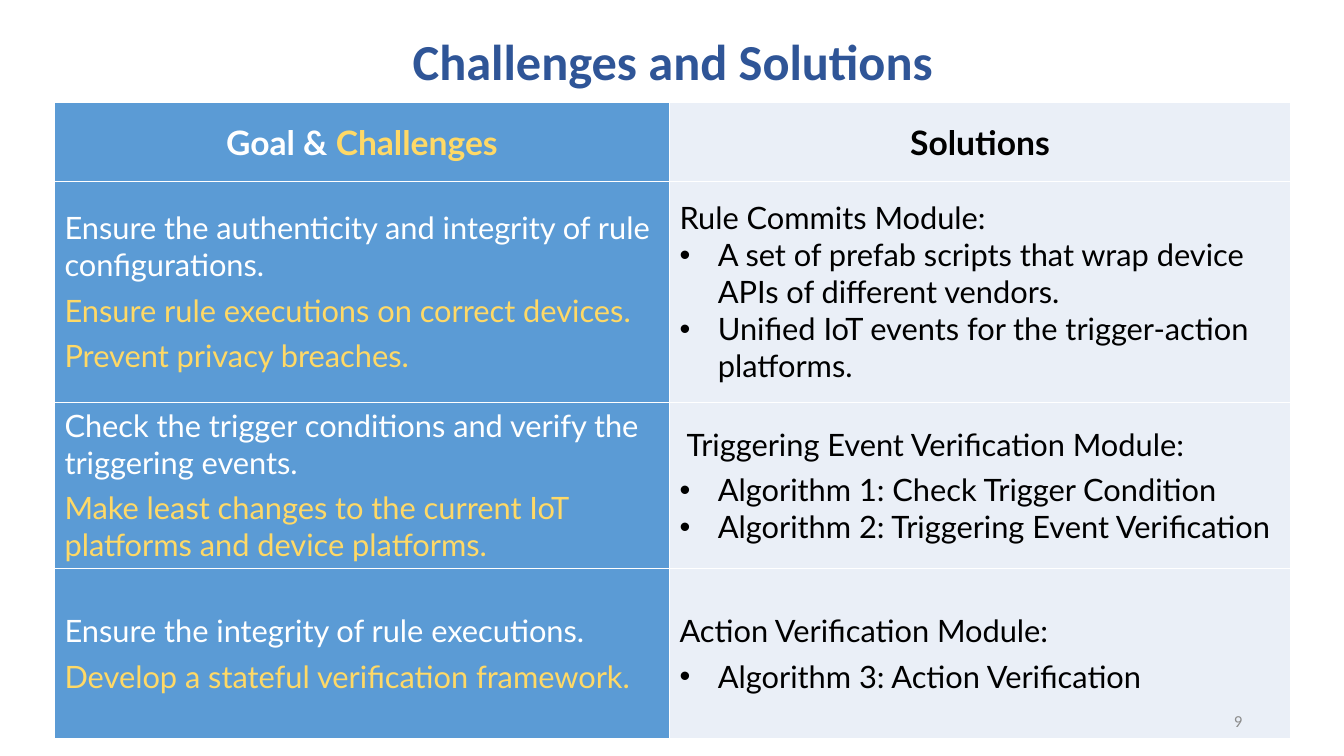
from typing import NamedTuple

from lxml import etree
from pptx import Presentation, util as u
from pptx.dml.color import RGBColor
from pptx.enum import text
from pptx.oxml import ns

WHITE, BLACK, YELLOW = "FFFFFF", "000000", "FFD966"
BLUE, PALE = "5B9BD5", "EAEFF7"
TITLE_BLUE, GREY = "2F5597", "8C8C8C"
CENTER, RIGHT = text.PP_ALIGN.CENTER, text.PP_ALIGN.RIGHT
MIDDLE = text.MSO_ANCHOR.MIDDLE


class Run(NamedTuple):
    text: str
    color: str


class Para(NamedTuple):
    runs: list[Run]
    before: int = 0
    bullet: bool = False


class Row(NamedTuple):
    height: float
    left: list[Para]
    right: list[Para]


def goal(words: str) -> Para:
    return Para([Run(words, WHITE)], 6)


def challenge(words: str) -> Para:
    return Para([Run(words, YELLOW)], 6)


def module(words: str) -> Para:
    return Para([Run(words, BLACK)])


def point(words: str, before: int = 0) -> Para:
    return Para([Run(words, BLACK)], before, True)


COLUMNS = [6.1, 6.16]
ROWS = [
    Row(0.78,
        [Para([Run("Goal & ", WHITE), Run("Challenges", YELLOW)])],
        [module("Solutions")]),
    Row(2.19,
        [goal("Ensure the authenticity and integrity of rule configurations."),
         challenge("Ensure rule executions on correct devices."),
         challenge("Prevent privacy breaches.")],
        [module("Rule Commits Module:"),
         point("A set of prefab scripts that wrap device APIs of different vendors."),
         point("Unified IoT events for the trigger-action platforms.")]),
    Row(1.62,
        [goal("Check the trigger conditions and verify the triggering events."),
         challenge("Make least changes to the current IoT platforms and device platforms.")],
        [module(" Triggering Event Verification Module:"),
         point("Algorithm 1: Check Trigger Condition", 6),
         point("Algorithm 2: Triggering Event Verification")]),
    Row(1.69,
        [goal("Ensure the integrity of rule executions."),
         challenge("Develop a stateful verification framework.")],
        [module("Action Verification Module:"),
         point("Algorithm 3: Action Verification", 6)]),
]


def rgb(color: str) -> RGBColor:
    return RGBColor.from_string(color)


def style(r, font: str, size: int, color: str, bold: bool = False) -> None:
    r.font.name = font
    r.font.size = u.Pt(size)
    r.font.bold = bold
    r.font.color.rgb = rgb(color)


def add_bullet(p) -> None:
    pPr = p._p.get_or_add_pPr()
    indent = u.Inches(0.38)
    pPr.set("marL", str(indent))
    pPr.set("indent", str(-indent))
    etree.SubElement(pPr, ns.qn("a:buFont"), typeface="Arial")
    etree.SubElement(pPr, ns.qn("a:buChar"), char="•")


def add_borders(cell, color: str) -> None:
    tcPr = cell._tc.get_or_add_tcPr()
    for side in ("lnL", "lnR", "lnT", "lnB"):
        ln = etree.SubElement(tcPr, ns.qn(f"a:{side}"), w=str(u.Pt(1)))
        fill = etree.SubElement(ln, ns.qn("a:solidFill"))
        etree.SubElement(fill, ns.qn("a:srgbClr"), val=color)


def fill_cell(cell, paras: list[Para], color: str, header: bool) -> None:
    add_borders(cell, WHITE)
    cell.fill.solid()
    cell.fill.fore_color.rgb = rgb(color)
    cell.vertical_anchor = MIDDLE
    tf = cell.text_frame
    for i, para in enumerate(paras):
        p = tf.add_paragraph() if i else tf.paragraphs[0]
        p.space_before = u.Pt(para.before)
        if header:
            p.alignment = CENTER
        if para.bullet:
            add_bullet(p)
        for run in para.runs:
            r = p.add_run()
            r.text = run.text
            style(r, "Lato", 24 if header else 22, run.color, header)


def add_title(s) -> None:
    sp = s.shapes.title
    sp.left, sp.top = u.Inches(1.86), u.Inches(0.01)
    sp.width, sp.height = u.Inches(9.63), u.Inches(1.06)
    tf = sp.text_frame
    tf.text = "Challenges and Solutions"
    tf.auto_size = text.MSO_AUTO_SIZE.NONE
    tf.vertical_anchor = MIDDLE
    tf.margin_left = tf.margin_right = u.Inches(0.04)
    tf.margin_top = tf.margin_bottom = 0
    p = tf.paragraphs[0]
    p.alignment = CENTER
    p.line_spacing = 1.2
    style(p.runs[0], "Calibri", 36, TITLE_BLUE, True)


def add_solutions_table(s) -> None:
    height = sum(row.height for row in ROWS)
    table = s.shapes.add_table(
        len(ROWS), len(COLUMNS), u.Inches(0.54), u.Inches(1.02),
        u.Inches(sum(COLUMNS)), u.Inches(height)).table
    table.first_row = table.horz_banding = False
    for column, width in zip(table.columns, COLUMNS):
        column.width = u.Inches(width)
    for i, row in enumerate(ROWS):
        table.rows[i].height = u.Inches(row.height)
        fill_cell(table.cell(i, 0), row.left, BLUE, i == 0)
        fill_cell(table.cell(i, 1), row.right, PALE, i == 0)


def add_page_number(s, number: str) -> None:
    sp = s.shapes.add_textbox(u.Inches(9.42), u.Inches(6.95), u.Inches(3), u.Inches(0.4))
    tf = sp.text_frame
    tf.word_wrap = True
    tf.vertical_anchor = MIDDLE
    tf.text = number
    p = tf.paragraphs[0]
    p.alignment = RIGHT
    style(p.runs[0], "Calibri", 12, GREY)


def main() -> None:
    prs = Presentation()
    prs.slide_width, prs.slide_height = u.Inches(13.33), u.Inches(7.5)
    s = prs.slides.add_slide(prs.slide_layouts.get_by_name("Title Only"))
    add_title(s)
    add_solutions_table(s)
    add_page_number(s, "9")
    prs.save("out.pptx")


if __name__ == "__main__":
    main()
